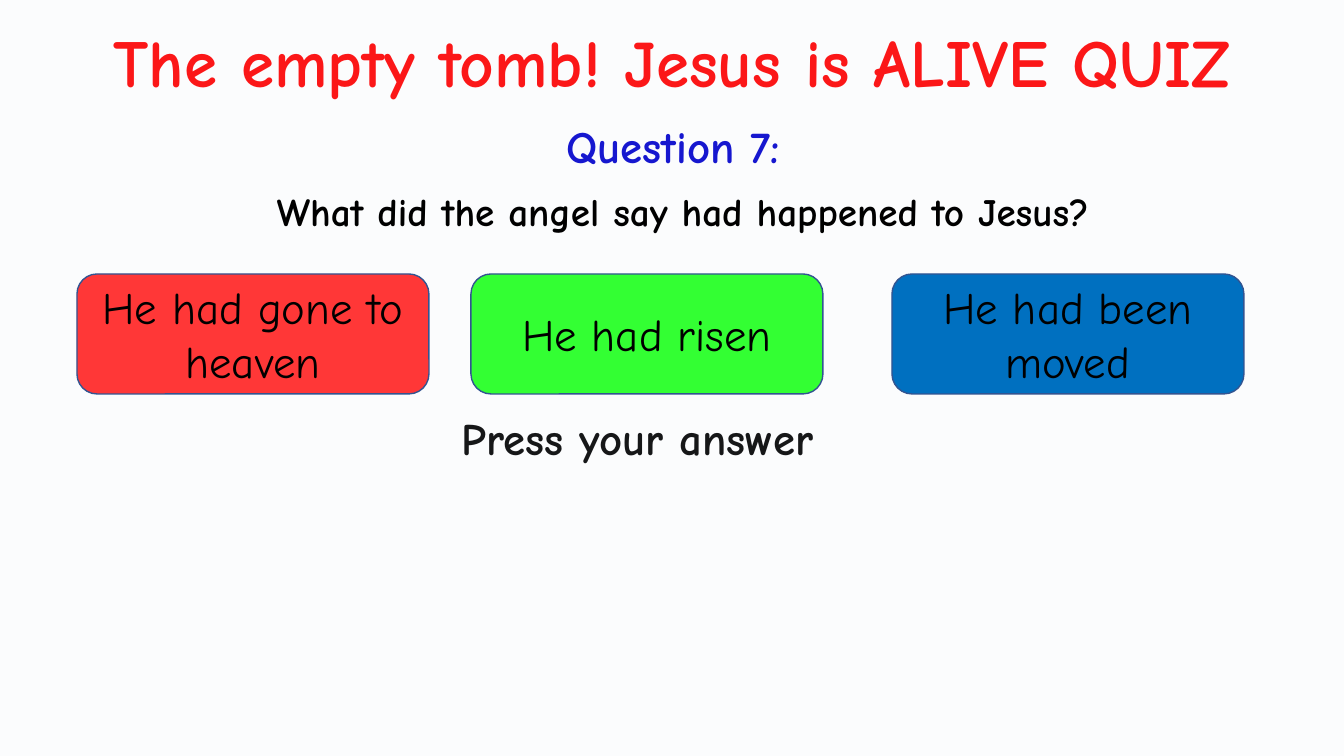
"""Build the quiz slide with a question and three answer buttons."""
from lxml.etree import SubElement
from pptx import Presentation
from pptx.dml.color import RGBColor
from pptx.enum.shapes import MSO_SHAPE
from pptx.enum.text import MSO_ANCHOR, PP_ALIGN
from pptx.oxml.ns import qn
from pptx.util import Pt

WIDE, HIGH = 1344, 756
SCALE = 12192000 / WIDE
FONT = "Comic Neue"

LABELS = [
    ("The empty tomb! Jesus is ALIVE QUIZ", (0, 15, WIDE, 92),
     dict(size=48, color="FF0000", wrap=False)),
    ("Press your answer", (452, 412, 678, 73),
     dict(align=PP_ALIGN.LEFT, lead=0.9, before=7.5)),
    ("Question 7:", (451, 114, 445, 65), dict(color="0000CC")),
]
PROMPT = ("What did the angel say had happened to Jesus?", (78, 179, 1210, 73),
          dict(size=28, lead=Pt(36), before=10))
ANSWERS = [
    ("He had gone to heaven", 77, "FF3737"),
    ("He had risen", 471, "33FF33"),
    ("He had been moved", 892, "0070C0"),
]
TOP, WIDTH, HEIGHT = 274, 352, 120


def px(*nums):
    return [round(num * SCALE) for num in nums]


def rgb(code):
    return RGBColor.from_string(code)


def write(shape, text, size=32, color="000000", bold=True, wrap=True,
          align=PP_ALIGN.CENTER, anchor=MSO_ANCHOR.TOP, lead=None, before=None):
    frame = shape.text_frame
    frame.word_wrap = wrap
    frame.vertical_anchor = anchor
    para = frame.paragraphs[0]
    para.alignment = align
    if lead:
        para.line_spacing = lead
    if before:
        para.space_before = Pt(before)
    run = para.add_run()
    run.text = text
    font = run.font
    font.name, font.size, font.bold = FONT, Pt(size), bold
    font.color.rgb = rgb(color)


def label(slide, text, box, style):
    write(slide.shapes.add_textbox(*px(*box)), text, **style)


def panel(slide, kind, box, fill, line=None):
    shape = slide.shapes.add_shape(kind, *px(*box))
    shape.shadow.inherit = False
    shape.fill.solid()
    shape.fill.fore_color.rgb = rgb(fill)
    if line:
        shape.line.color.rgb = rgb(line)
        shape.line.width = Pt(1)
    else:
        shape.line.fill.background()
    return shape


def main():
    deck = Presentation()
    deck.slide_width, deck.slide_height = px(WIDE, HIGH)
    slide = deck.slides.add_slide(deck.slide_layouts[6])
    for item in LABELS:
        label(slide, *item)

    veil = panel(slide, MSO_SHAPE.RECTANGLE, (0, 0, WIDE, HIGH), "DAE3F3")
    tint = veil._element.spPr.find(qn("a:solidFill"))[0]
    SubElement(tint, qn("a:alpha"), val="10000")

    for text, left, fill in ANSWERS:
        button = panel(slide, MSO_SHAPE.ROUNDED_RECTANGLE,
                       (left, TOP, WIDTH, HEIGHT), fill, "325491")
        write(button, text, bold=False, anchor=MSO_ANCHOR.MIDDLE)
    label(slide, *PROMPT)
    deck.save("out.pptx")


if __name__ == "__main__":
    main()
